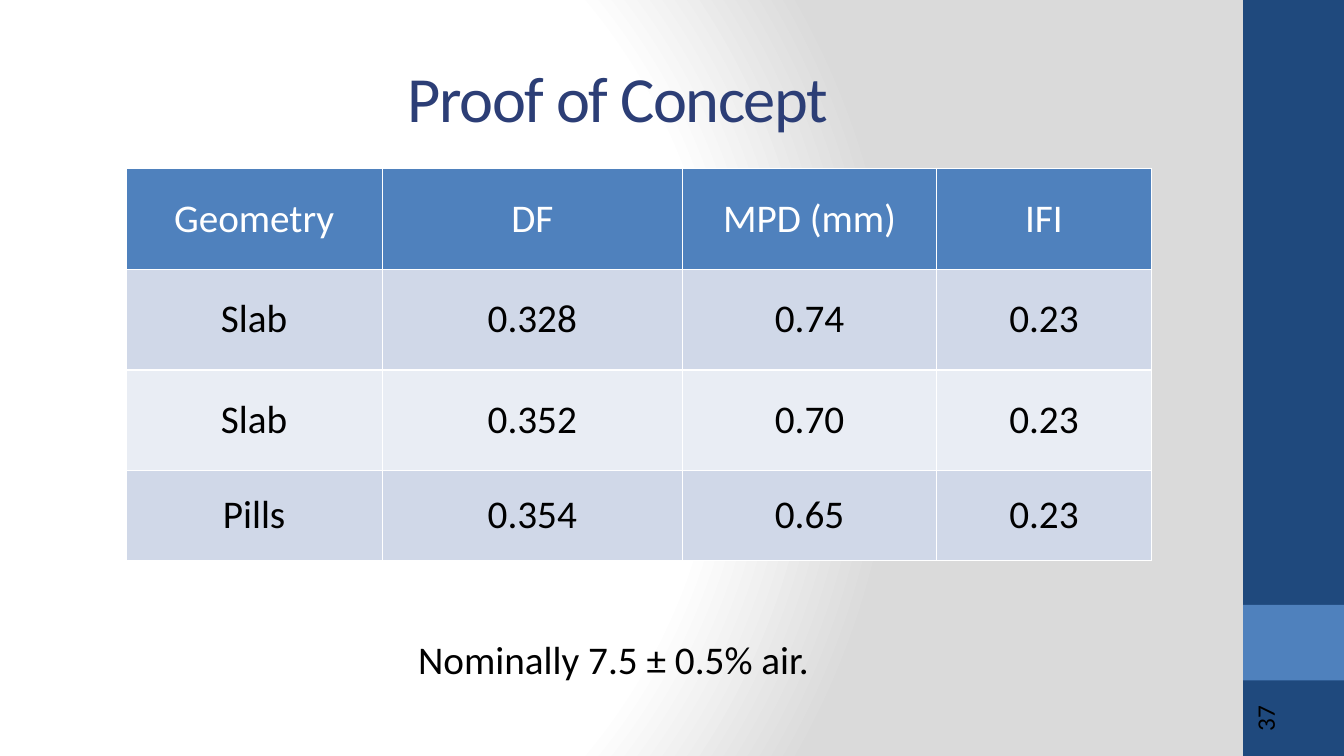
from lxml.etree import SubElement
from pptx import Presentation
from pptx.dml.color import RGBColor
from pptx.enum.shapes import MSO_SHAPE as Shape
from pptx.enum.text import MSO_ANCHOR as Anchor, PP_ALIGN as Align
from pptx.oxml import parse_xml
from pptx.oxml.ns import nsdecls, qn
from pptx.util import Inches, Pt

# Content
TITLE = "Proof of Concept"
ROWS = [
    ("Geometry", "DF", "MPD (mm)", "IFI"),
    ("Slab", "0.328", "0.74", "0.23"),
    ("Slab", "0.352", "0.70", "0.23"),
    ("Pills", "0.354", "0.65", "0.23"),
]
NOTE = "Nominally 7.5 ± 0.5% air."
PAGE_NUMBER = "37"

# Theme and layout
THEME = {
    "font": "Calibri",
    "title": {"size": 46, "color": "2C3E76"},
    "header": {"size": 28, "color": "FFFFFF"},
    "body": {"size": 28, "color": "000000"},
    "number": {"size": 18, "color": "000000"},
    "navy": "1F497D", "blue": "4F81BD", "bands": ("E9EDF4", "D0D8E8"),
    "white": "FFFFFF", "gray": "DADADA",
}
WIDTH, HEIGHT = 13.33, 7.5
SIDEBAR_WIDTH = 1
SIDEBAR = [(0, HEIGHT, "navy"), (0.8 * HEIGHT, 0.1 * HEIGHT, "blue")]
TABLE_LEFT, TABLE_TOP = 1.25, 1.67
COLUMNS = [2.54, 2.98, 2.52, 2.13]
ROW_HEIGHTS = [1, 1, 1, 0.89]


def write(frame, text, style, alignment=Align.CENTER):
    paragraph = frame.paragraphs[0]
    paragraph.alignment = alignment
    run = paragraph.add_run()
    run.text = text
    look = {"name": THEME["font"], "size": Pt(THEME[style]["size"])}
    for name, value in look.items():
        setattr(run.font, name, value)
    run.font.color.rgb = RGBColor.from_string(THEME[style]["color"])
    return run


def add_text(slide, box, text, style, alignment=Align.CENTER, anchor=Anchor.TOP):
    shape = slide.shapes.add_textbox(*map(Inches, box))
    shape.text_frame.word_wrap = True
    shape.text_frame.vertical_anchor = anchor
    return shape, write(shape.text_frame, text, style, alignment)


def paint(fill, color):
    fill.solid()
    fill.fore_color.rgb = RGBColor.from_string(color)


def add_borders(cell):
    properties = cell._tc.get_or_add_tcPr()
    for index, side in enumerate("LRTB"):
        line = SubElement(properties, qn(f"a:ln{side}"), w=str(Pt(1)))
        SubElement(SubElement(line, qn("a:solidFill")), qn("a:srgbClr"), val=THEME["white"])
        properties.insert(index, line)


def set_background(slide):
    paint(slide.background.fill, THEME["white"])
    solid = slide._element.find(".//" + qn("p:bgPr")).find(qn("a:solidFill"))
    stops = "".join(
        f'<a:gs pos="{share * 1000}"><a:srgbClr val="{THEME[color]}"/></a:gs>'
        for share, color in [(0, "white"), (75, "white"), (100, "gray")])
    solid.getparent().replace(solid, parse_xml(
        f'<a:gradFill {nsdecls("a")} rotWithShape="1"><a:gsLst>{stops}</a:gsLst>'
        '<a:path path="circle"><a:fillToRect l="20000" t="50000" r="100000" b="50000"/>'
        '</a:path></a:gradFill>'))


def add_results_table(slide):
    box = (TABLE_LEFT, TABLE_TOP, sum(COLUMNS), sum(ROW_HEIGHTS))
    table = slide.shapes.add_table(len(ROWS), len(COLUMNS), *map(Inches, box)).table
    for column, width in zip(table.columns, COLUMNS):
        column.width = Inches(width)
    for row, height in zip(table.rows, ROW_HEIGHTS):
        row.height = Inches(height)
    for r, values in enumerate(ROWS):
        for c, value in enumerate(values):
            cell = table.cell(r, c)
            cell.vertical_anchor = Anchor.MIDDLE
            write(cell.text_frame, value, "body" if r else "header")
            paint(cell.fill, THEME["bands"][r % 2] if r else THEME["blue"])
            add_borders(cell)


def main():
    presentation = Presentation()
    presentation.slide_width, presentation.slide_height = Inches(WIDTH), Inches(HEIGHT)
    slide = presentation.slides.add_slide(presentation.slide_layouts[6])
    set_background(slide)

    # Sidebar
    for top, height, color in SIDEBAR:
        box = (WIDTH - SIDEBAR_WIDTH, top, SIDEBAR_WIDTH, height)
        bar = slide.shapes.add_shape(Shape.RECTANGLE, *map(Inches, box))
        bar.shadow.inherit = False
        paint(bar.fill, THEME[color])
        bar.line.fill.background()

    # Title, table, page number and note
    _, title = add_text(slide, (1.42, 0.5, 9.42, 0.93), TITLE, "title", anchor=Anchor.MIDDLE)
    title.font._element.set("spc", "-100")
    add_results_table(slide)
    number, _ = add_text(slide, (11.89, 6.37, 1.44, 0.53), PAGE_NUMBER, "number", Align.LEFT)
    number.rotation = 270
    add_text(slide, (2, 6.25, 8.17, 0.57), NOTE, "body")

    presentation.save("out.pptx")


if __name__ == "__main__":
    main()
